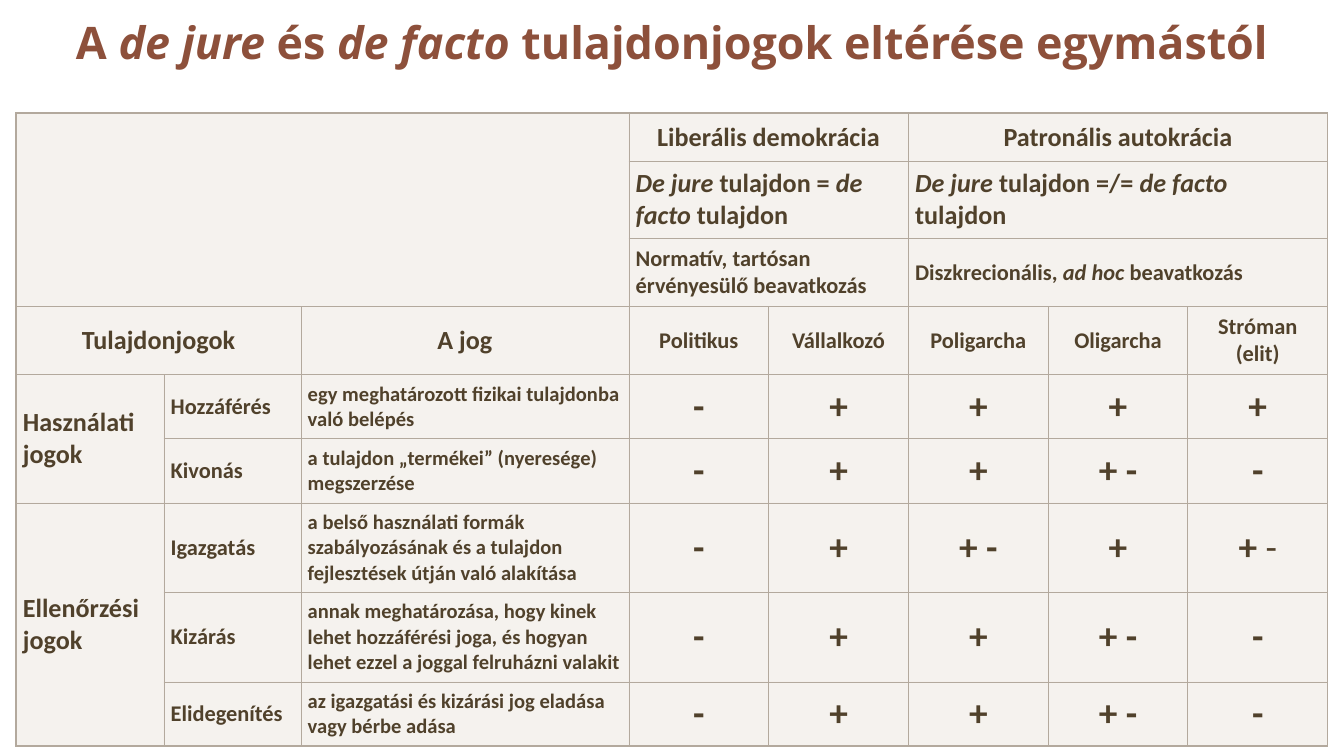
import pptx
import pptx.dml.color
import pptx.enum.text
import pptx.oxml
import pptx.oxml.ns
import pptx.util

RGBColor = pptx.dml.color.RGBColor
Inches = pptx.util.Inches
Pt = pptx.util.Pt
PP_ALIGN = pptx.enum.text.PP_ALIGN
MSO_ANCHOR = pptx.enum.text.MSO_ANCHOR

RUST = RGBColor(0x8D, 0x50, 0x3B)
BROWN = RGBColor(0x50, 0x41, 0x2B)
SAND = RGBColor(0xEF, 0xEA, 0xE4)
TAUPE = RGBColor(0xB3, 0xA9, 0x9D)
SAND_ALPHA = 60

SLIDE_W = 10
SLIDE_H = SLIDE_W * 9 / 16
MARGIN = 0.12
TABLE_TOP = 0.84
COLS = [1.1, 1.02, 2.44] + [1.04] * 5
ROWS = [0.36, 0.57, 0.5, 0.5, 0.47, 0.47, 0.66, 0.66, 0.47]

# Asterisks enclose the emphasised parts of a text.
TITLE = "A *de jure *és *de facto *tulajdonjogok eltérése egymástól"

# Row, column, rows spanned, columns spanned
SPANS = [(0, 0, 3, 3), (3, 0, 1, 2), (4, 0, 2, 1), (6, 0, 3, 1)]
SPANS += [(row, col, 1, width) for row in range(3) for col, width in ((3, 2), (5, 3))]

# Row, column, text, size, centred
HEADINGS = [
    (0, 3, "Liberális demokrácia", 14, True),
    (0, 5, "Patronális autokrácia", 14, True),
    (1, 3, "*De jure *tulajdon = *de facto *tulajdon", 14, False),
    (1, 5, "*De jure *tulajdon =/= *de facto *tulajdon", 14, False),
    (2, 3, "Normatív, tartósan érvényesülő beavatkozás", 12, False),
    (2, 5, "Diszkrecionális, *ad hoc *beavatkozás", 12, False),
    (3, 0, "Tulajdonjogok", 14, True),
    (3, 2, "A jog", 14, True),
    (4, 0, "Használati jogok", 14, False),
    (6, 0, "Ellenőrzési jogok", 14, False),
]
ACTORS = ["Politikus", "Vállalkozó", "Poligarcha", "Oligarcha", "Stróman (elit)"]
RIGHTS = [
    ("Hozzáférés", "egy meghatározott fizikai tulajdonba való belépés",
     ["-", "+", "+", "+", "+"]),
    ("Kivonás", "a tulajdon „termékei” (nyeresége) megszerzése",
     ["-", "+", "+", "+ -", "-"]),
    ("Igazgatás", "a belső használati formák szabályozásának és a tulajdon "
     "fejlesztések útján való alakítása",
     ["-", "+", "+ -", "+", "+* -*"]),
    ("Kizárás", "annak meghatározása, hogy kinek lehet hozzáférési joga, "
     "és hogyan lehet ezzel a joggal felruházni valakit",
     ["-", "+", "+", "+ -", "-"]),
    ("Elidegenítés", "az igazgatási és kizárási jog eladása vagy bérbe adása",
     ["-", "+", "+", "+ -", "-"]),
]


def add_runs(p, text, font, size, color, light=False):
    """Write bold text; marked parts are italic, or not bold if light is set."""
    for i, part in enumerate(text.split("*")):
        if not part:
            continue
        marked = i % 2 == 1
        r = p.add_run()
        r.text = part
        r.font.name = font
        r.font.size = Pt(size)
        r.font.color.rgb = color
        r.font.bold = not (marked and light)
        r.font.italic = marked and not light


def set_title(slide):
    sp = slide.shapes.title
    sp.left, sp.top = Inches(MARGIN), Inches(0.06)
    sp.width, sp.height = Inches(SLIDE_W - 2 * MARGIN), Inches(0.63)
    tf = sp.text_frame
    tf.word_wrap = True
    tf.auto_size = pptx.enum.text.MSO_AUTO_SIZE.NONE
    tf.vertical_anchor = MSO_ANCHOR.TOP
    p = tf.paragraphs[0]
    p.alignment = PP_ALIGN.CENTER
    add_runs(p, TITLE, "Open Sans", 24, RUST)


def fill_cell(cell):
    cell.fill.solid()
    cell.fill.fore_color.rgb = SAND
    color = cell._tc.tcPr.find(".//" + pptx.oxml.ns.qn("a:srgbClr"))
    color.append(pptx.oxml.parse_xml(
        f'<a:alpha {pptx.oxml.ns.nsdecls("a")} val="{SAND_ALPHA * 1000}"/>'))


def set_borders(cell, row, col):
    """Draw a thicker line where the cell meets the table's outer edge."""
    outer = {
        "L": col == 0,
        "R": col + cell.span_width == len(COLS),
        "T": row == 0,
        "B": row + cell.span_height == len(ROWS),
    }
    for i, (side, on_edge) in enumerate(outer.items()):
        width = Pt(1 if on_edge else 0.5)
        cell._tc.tcPr.insert(i, pptx.oxml.parse_xml(
            f'<a:ln{side} {pptx.oxml.ns.nsdecls("a")} w="{width}"><a:solidFill>'
            f'<a:srgbClr val="{TAUPE}"/></a:solidFill></a:ln{side}>'))


def write_cell(table, row, col, text, size, centred=False, light=False):
    p = table.cell(row, col).text_frame.paragraphs[0]
    p.alignment = PP_ALIGN.CENTER if centred else PP_ALIGN.LEFT
    add_runs(p, text, "Calibri", size, BROWN, light)


def add_grid(slide):
    """Add the empty table with its merged cells, fills and borders."""
    table = slide.shapes.add_table(
        len(ROWS), len(COLS), Inches(MARGIN), Inches(TABLE_TOP),
        Inches(sum(COLS)), Inches(sum(ROWS))).table
    table.first_row = table.horz_banding = False
    for column, width in zip(table.columns, COLS):
        column.width = Inches(width)
    for row, height in zip(table.rows, ROWS):
        row.height = Inches(height)
    for row, col, high, wide in SPANS:
        table.cell(row, col).merge(table.cell(row + high - 1, col + wide - 1))
    for row in range(len(ROWS)):
        for col in range(len(COLS)):
            cell = table.cell(row, col)
            cell.vertical_anchor = MSO_ANCHOR.MIDDLE
            cell.margin_left = cell.margin_right = Inches(0.05)
            cell.margin_top = cell.margin_bottom = Inches(0.05)
            fill_cell(cell)
            if not cell.is_spanned:
                set_borders(cell, row, col)
    return table


def write_table(table):
    for heading in HEADINGS:
        write_cell(table, *heading)
    for col, actor in enumerate(ACTORS, 3):
        write_cell(table, 3, col, actor, 12, centred=True)
    for row, (right, meaning, signs) in enumerate(RIGHTS, 4):
        write_cell(table, row, 1, right, 12)
        write_cell(table, row, 2, meaning, 11)
        for col, sign in enumerate(signs, 3):
            write_cell(table, row, col, sign, 20, centred=True, light=True)


def main():
    prs = pptx.Presentation()
    prs.slide_width, prs.slide_height = Inches(SLIDE_W), Inches(SLIDE_H)
    slide = prs.slides.add_slide(prs.slide_layouts[5])
    set_title(slide)
    write_table(add_grid(slide))
    prs.save("out.pptx")


if __name__ == "__main__":
    main()
